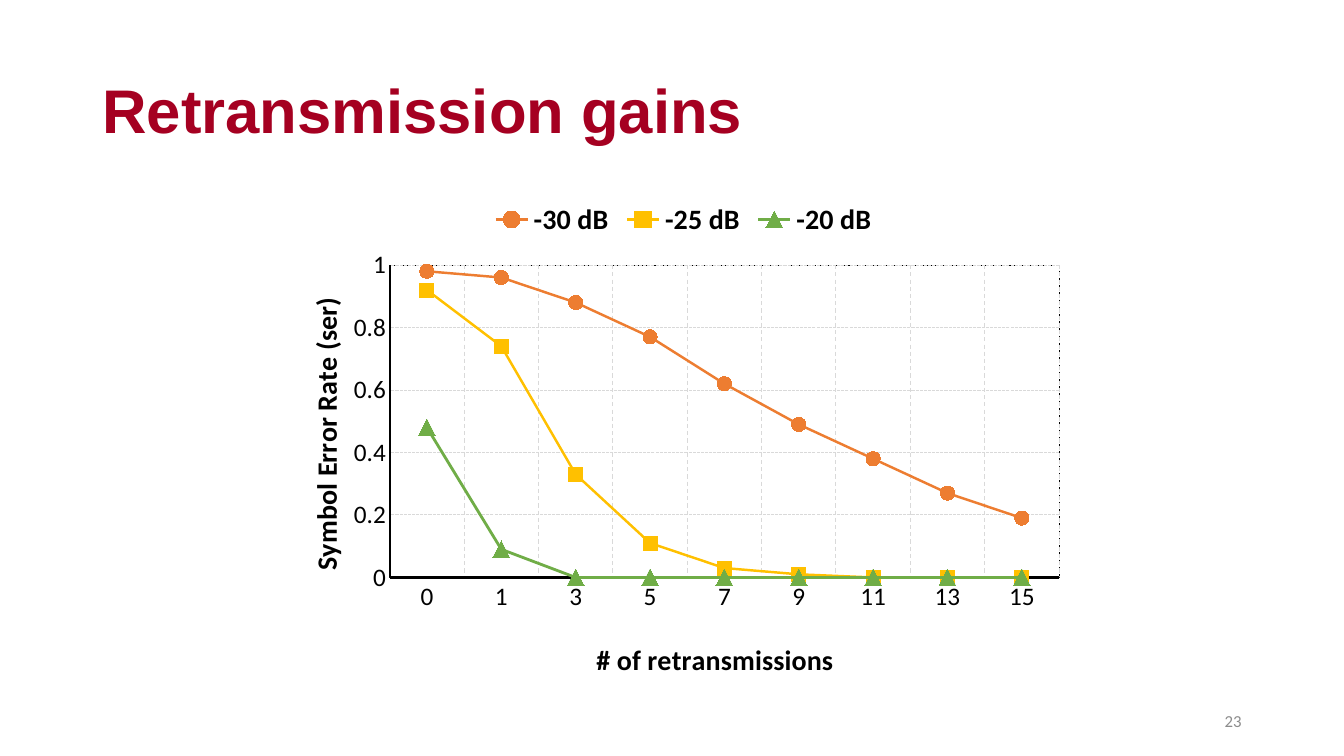
from lxml import etree
from pptx import Presentation
from pptx import util as u
from pptx.chart.data import CategoryChartData
from pptx.dml.color import RGBColor
from pptx.enum import chart as ch, dml, text
from pptx.oxml.ns import qn

RED = RGBColor(0xA5, 0x00, 0x21)
GRAY = RGBColor(0x8C, 0x8C, 0x8C)
GRID = RGBColor(0xD9, 0xD9, 0xD9)
BLACK = RGBColor(0, 0, 0)
ORANGE = RGBColor(0xED, 0x7D, 0x31)
YELLOW = RGBColor(0xFF, 0xC0, 0x00)
GREEN = RGBColor(0x70, 0xAD, 0x47)

RETRANSMISSIONS = ["0", "1", "3", "5", "7", "9", "11", "13", "15"]
MARK = ch.XL_MARKER_STYLE
SERIES = [
    ("-30 dB", [0.98, 0.96, 0.88, 0.77, 0.62, 0.49, 0.38, 0.27, 0.19],
     ORANGE, 1.75, MARK.CIRCLE, 10),
    ("-25 dB", [0.92, 0.74, 0.33, 0.11, 0.03, 0.01, 0, 0, 0],
     YELLOW, 1.75, MARK.SQUARE, 10),
    ("-20 dB", [0.48, 0.09, 0, 0, 0, 0, 0, 0, 0],
     GREEN, 2, MARK.TRIANGLE, 12),
]


class Deck:
    COLS, ROWS = 40, 22.5
    BODY = "Calibri"

    def __init__(self):
        self.prs = Presentation()
        self.prs.slide_width = u.Inches(13.33)
        self.prs.slide_height = u.Inches(7.5)
        self.s = self.prs.slides.add_slide(self.prs.slide_layouts[6])

    def box(self, col, row, cols, rows):
        w = self.prs.slide_width / self.COLS
        h = self.prs.slide_height / self.ROWS
        return int(col * w), int(row * h), int(cols * w), int(rows * h)

    def font(self, f, size, color=BLACK, bold=False, name=BODY):
        f.name, f.size, f.bold = name, u.Pt(size), bold
        f.color.rgb = color

    def line(self, ln, color, width, dash=None):
        ln.color.rgb = color
        ln.width = u.Pt(width)
        if dash:
            ln.dash_style = dash

    def text(self, at, words, align=text.PP_ALIGN.LEFT, spacing=1.0, **style):
        tf = self.s.shapes.add_textbox(*self.box(*at)).text_frame
        tf.word_wrap = True
        tf.vertical_anchor = text.MSO_ANCHOR.MIDDLE
        p = tf.paragraphs[0]
        p.alignment, p.line_spacing = align, spacing
        r = p.add_run()
        r.text = words
        self.font(r.font, **style)

    def place(self, el, index, **shares):
        for old in el.findall(qn("c:layout")):
            el.remove(old)
        layout = etree.Element(qn("c:layout"))
        manual = etree.SubElement(layout, qn("c:manualLayout"))
        if "w" in shares:
            etree.SubElement(manual, qn("c:layoutTarget"), val="inner")
        for key in ("x", "y"):
            etree.SubElement(manual, qn(f"c:{key}Mode"), val="edge")
        for key, share in shares.items():
            etree.SubElement(manual, qn(f"c:{key}"), val=str(share))
        el.insert(index, layout)

    def axis(self, ax, title, dash, x, y):
        ax.major_tick_mark = ax.minor_tick_mark = ch.XL_TICK_MARK.NONE
        ax.has_major_gridlines = True
        self.line(ax.major_gridlines.format.line, GRID, 0.75, dash)
        self.line(ax.format.line, BLACK, 1.5)
        self.font(ax.tick_labels.font, 18)
        r = ax.axis_title.text_frame.paragraphs[0].add_run()
        r.text = title
        self.font(r.font, 20, bold=True)
        self.place(ax.axis_title._element, 1, x=x, y=y)

    def frame(self, area):
        sp = etree.SubElement(area, qn("c:spPr"))
        etree.SubElement(sp, qn("a:noFill"))
        ln = etree.SubElement(sp, qn("a:ln"), w=str(u.Pt(0.75)))
        fill = etree.SubElement(ln, qn("a:solidFill"))
        etree.SubElement(fill, qn("a:srgbClr"), val=str(BLACK))
        etree.SubElement(ln, qn("a:prstDash"), val="dash")

    def line_chart(self, at, cats, series, cat_title, val_title):
        data = CategoryChartData()
        data.categories = cats
        for name, vals, *_ in series:
            data.add_series(name, vals)
        chart = self.s.shapes.add_chart(
            ch.XL_CHART_TYPE.LINE_MARKERS, *self.box(*at), data).chart
        self.font(chart.font, 18)
        chart.has_title = False
        chart.has_legend = True
        chart.legend.position = ch.XL_LEGEND_POSITION.TOP
        chart.legend.include_in_layout = False
        self.font(chart.legend.font, 20, bold=True)
        self.place(chart.legend._element, 1, x=0.27, y=0.02)

        self.axis(chart.category_axis, cat_title, dml.MSO_LINE.DASH, 0.4, 0.89)
        val = chart.value_axis
        self.axis(val, val_title, dml.MSO_LINE.SQUARE_DOT, 0.04, 0.21)
        val.minimum_scale, val.maximum_scale, val.major_unit = 0, 1, 0.2
        val.tick_labels.number_format = "General"
        val.tick_labels.number_format_is_linked = False

        plot = chart.plots[0]
        plot.vary_by_categories = False
        for ser, (_, _, color, width, mark, size) in zip(plot.series, series):
            ser.smooth = False
            self.line(ser.format.line, color, width)
            ser.marker.style, ser.marker.size = mark, size
            ser.marker.format.fill.solid()
            ser.marker.format.fill.fore_color.rgb = color
            self.line(ser.marker.format.line, color, 0.75)

        area = chart._chartSpace.find(".//" + qn("c:plotArea"))
        self.place(area, 0, x=0.15, y=0.156, w=0.83, h=0.62)
        self.frame(area)


def main():
    d = Deck()
    d.text((2.75, 1.2, 34.5, 4.35), "Retransmission gains", spacing=0.9,
           size=44, color=RED, bold=True, name="Arial")
    d.line_chart((8, 5.55, 24, 15), RETRANSMISSIONS, SERIES,
                 "# of retransmissions", "Symbol Error Rate (ser)")
    d.text((28.25, 20.85, 9, 1.2), "23", align=text.PP_ALIGN.RIGHT,
           size=12, color=GRAY)
    d.prs.save("out.pptx")


if __name__ == "__main__":
    main()
